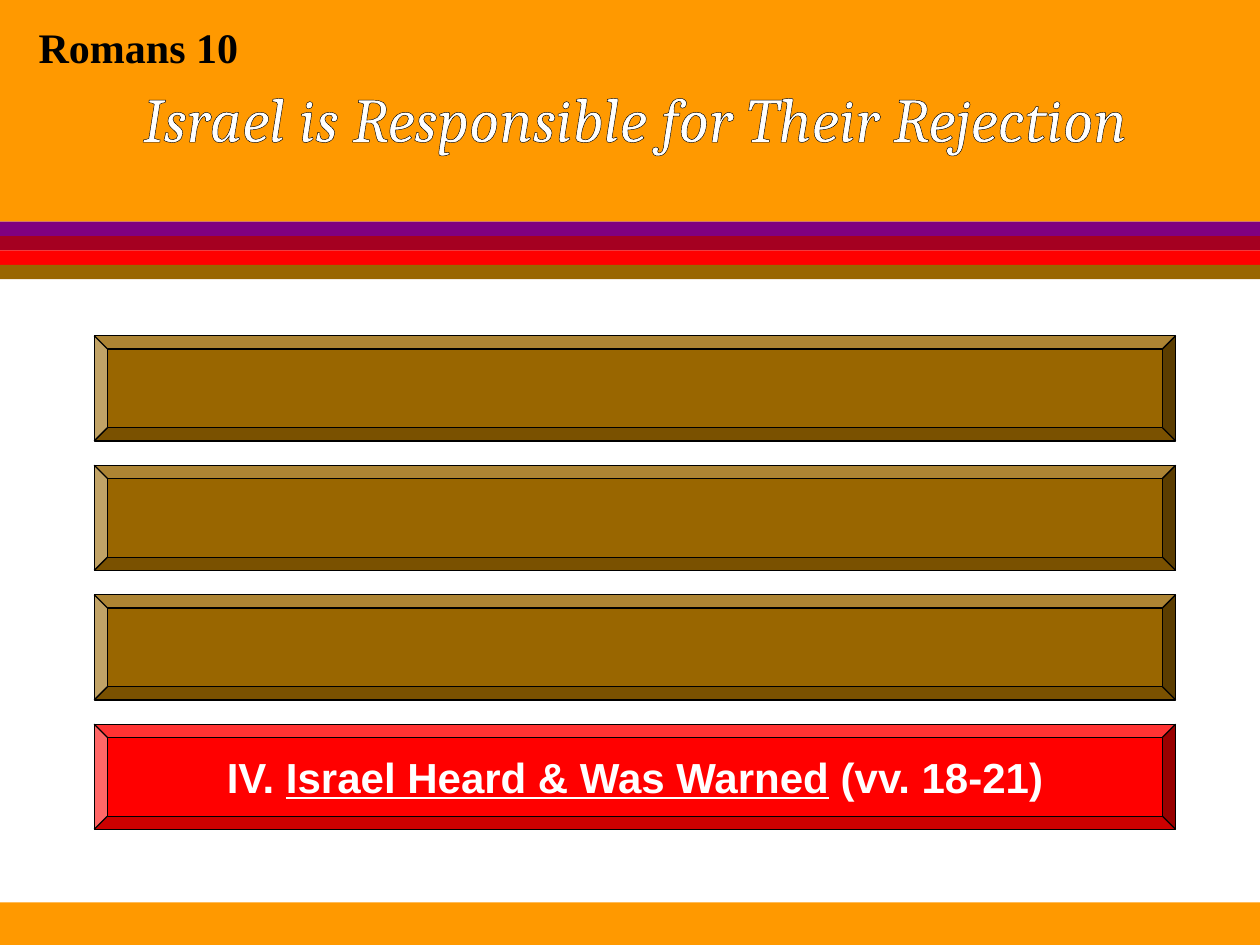
import pptx
import pptx.util
import pptx.dml.color
import pptx.enum.shapes
import pptx.enum.text
import pptx.oxml

Cm = pptx.util.Cm
Pt = pptx.util.Pt
RGBColor = pptx.dml.color.RGBColor
SHAPE = pptx.enum.shapes.MSO_SHAPE
ALIGN = pptx.enum.text.PP_ALIGN
ANCHOR = pptx.enum.text.MSO_ANCHOR
AUTO_SIZE = pptx.enum.text.MSO_AUTO_SIZE

BLACK = RGBColor(0x00, 0x00, 0x00)
WHITE = RGBColor(0xFF, 0xFF, 0xFF)
GRAY = RGBColor(0x96, 0x96, 0x96)
ORANGE = RGBColor(0xFF, 0x99, 0x00)
PURPLE = RGBColor(0x80, 0x00, 0x80)
CRIMSON = RGBColor(0xA5, 0x00, 0x21)
RED = RGBColor(0xFF, 0x00, 0x00)
BROWN = RGBColor(0x99, 0x66, 0x00)

PAGE_WIDTH = Cm(25.4)
PAGE_HEIGHT = Cm(19.05)


def add_text(para, text, size=24, font="Arial", color=WHITE, bold=False, italic=False, underline=False):
    span = para.add_run()
    span.text = text
    span.font.size = Pt(size)
    span.font.name = font
    span.font.color.rgb = color
    span.font.bold = bold
    span.font.italic = italic
    span.font.underline = underline
    return span


def add_block(page, kind, left, top, width, height, color):
    block = page.shapes.add_shape(kind, left, top, width, height)
    block.shadow.inherit = False
    block.fill.solid()
    block.fill.fore_color.rgb = color
    block.line.fill.background()
    return block


deck = pptx.Presentation()
deck.slide_width = PAGE_WIDTH
deck.slide_height = PAGE_HEIGHT
page = deck.slides.add_slide(deck.slide_layouts[5])
page.background.fill.solid()
page.background.fill.fore_color.rgb = GRAY

header_height = Cm(4.47)
bands = [
    (Cm(3.81), Cm(15.24), WHITE),
    (Cm(18.19), Cm(0.86), ORANGE),
    (0, header_height, ORANGE),
]
stripe_height = Cm(0.29)
for index, color in enumerate([PURPLE, CRIMSON, RED, BROWN]):
    bands.append((header_height + index * stripe_height, stripe_height, color))
for top, height, color in bands:
    add_block(page, SHAPE.RECTANGLE, 0, top, PAGE_WIDTH, height, color)

chapter = page.shapes.add_textbox(Cm(0.53), Cm(0.2), Cm(4.55), Cm(1.27))
chapter.text_frame.word_wrap = False
chapter.text_frame.margin_top = Cm(0.24)
chapter.text_frame.margin_bottom = 0
add_text(chapter.text_frame.paragraphs[0], "Romans 10", font="Times New Roman", color=BLACK, bold=True)

title = page.shapes.title
title.left, title.top, title.width, title.height = Cm(2.54), Cm(1.47), Cm(20.52), Cm(2.54)
title.text_frame.auto_size = AUTO_SIZE.NONE
title.text_frame.word_wrap = False
title.text_frame.vertical_anchor = ANCHOR.TOP
para = title.text_frame.paragraphs[0]
para.alignment = ALIGN.CENTER
span = add_text(para, "Israel is Responsible for Their Rejection", size=36, font="Cambria", italic=True)
outline = pptx.oxml.parse_xml(
    '<a:ln xmlns:a="http://schemas.openxmlformats.org/drawingml/2006/main" w="9525">'
    f'<a:solidFill><a:srgbClr val="{BLACK}"/></a:solidFill></a:ln>'
)
span.font._element.insert(0, outline)
page.shapes._spTree.append(title._element)

for index, color in enumerate([BROWN, BROWN, BROWN, RED]):
    bar = add_block(page, SHAPE.BEVEL, Cm(1.9), Cm(6.77 + index * 2.61), Cm(21.8), Cm(2.12), color)
    bar.adjustments[0] = 0.125
    bar.line.color.rgb = BLACK
    bar.line.width = Pt(0.75)

bar.text_frame.word_wrap = False
bar.text_frame.vertical_anchor = ANCHOR.MIDDLE
para = bar.text_frame.paragraphs[0]
para.alignment = ALIGN.CENTER
add_text(para, "IV. ", bold=True)
add_text(para, "Israel Heard & Was Warned", bold=True, underline=True)
add_text(para, " (vv. 18-21)", bold=True)

deck.save("out.pptx")
